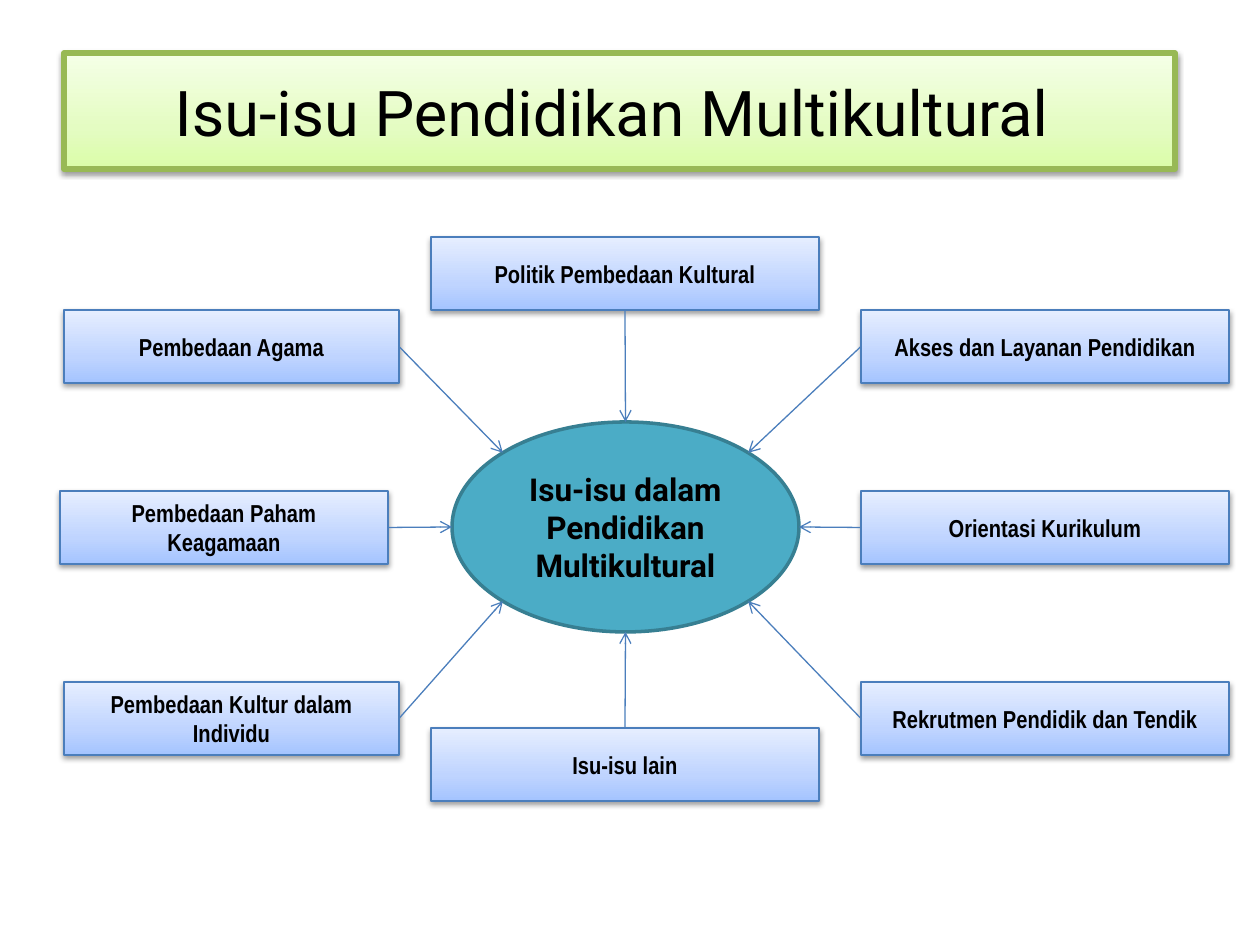
import math
import pptx
import pptx.util
import pptx.dml.color
import pptx.enum.shapes
import pptx.enum.text
import pptx.oxml.ns
import lxml.etree

RGBColor = pptx.dml.color.RGBColor
BLACK = RGBColor(0x00, 0x00, 0x00)
TEAL = RGBColor(0x4B, 0xAC, 0xC6)
DARK_TEAL = RGBColor(0x37, 0x7F, 0x92)
BLUE = RGBColor(0x4B, 0x7E, 0xBC)
GREEN = RGBColor(0x98, 0xB9, 0x55)
BLUE_STOPS = [
    (0, RGBColor(0xA4, 0xC4, 0xFF)),
    (0.35, RGBColor(0xBF, 0xD4, 0xFF)),
    (1, RGBColor(0xE6, 0xEE, 0xFF)),
]
GREEN_STOPS = [
    (0, RGBColor(0xDA, 0xFD, 0xA7)),
    (0.35, RGBColor(0xE4, 0xFC, 0xC2)),
    (1, RGBColor(0xF5, 0xFF, 0xE7)),
]
TITLE_FONT = {"name": "Roboto", "size": pptx.util.Pt(36), "bold": False}
HUB_FONT = {"name": "Roboto", "size": pptx.util.Pt(18), "bold": True}
ISSUE_FONT = {"name": "Arial Narrow", "size": pptx.util.Pt(14), "bold": True}

SCALE = 914400 / 126
TOP, LEFT, BOTTOM, RIGHT = range(4)
ISSUE_HEIGHT = 73
ISSUES = [
    ("Akses dan Layanan Pendidikan", 801, 73, 368, LEFT, (1, -1)),
    ("Politik Pembedaan Kultural", 371, 0, 388, BOTTOM, (0, -1)),
    ("Orientasi Kurikulum", 801, 254, 368, LEFT, (1, 0)),
    ("Isu-isu lain", 371, 491, 388, TOP, (0, 1)),
    ("Pembedaan Agama", 4, 73, 335, RIGHT, (-1, -1)),
    ("Pembedaan Paham Keagamaan", 0, 254, 328, RIGHT, (-1, 0)),
    ("Rekrutmen Pendidik dan Tendik", 801, 445, 368, LEFT, (1, 1)),
    ("Pembedaan Kultur dalam Individu", 4, 445, 335, RIGHT, (-1, 1)),
]


def px(length):
    return round(length * SCALE)


def add_element(parent, tag, **attributes):
    return lxml.etree.SubElement(parent, pptx.oxml.ns.qn(tag), attributes)


def set_attributes(target, values):
    for name, value in values.items():
        setattr(target, name, value)


def set_line(shape, color, points):
    shape.line.color.rgb = color
    shape.line.width = pptx.util.Pt(points)


def set_text(shape, text, font_values):
    frame = shape.text_frame
    set_attributes(frame, {
        "word_wrap": True,
        "auto_size": pptx.enum.text.MSO_AUTO_SIZE.NONE,
        "vertical_anchor": pptx.enum.text.MSO_ANCHOR.MIDDLE,
    })
    paragraph = frame.paragraphs[0]
    paragraph.alignment = pptx.enum.text.PP_ALIGN.CENTER
    run = paragraph.add_run()
    run.text = text
    set_attributes(run.font, font_values)
    run.font.color.rgb = BLACK


def set_gradient(shape, stops):
    shape.fill.gradient()
    shape.fill.gradient_angle = 90
    stop_list = shape._element.spPr.find(".//" + pptx.oxml.ns.qn("a:gsLst"))
    for stop in list(stop_list):
        stop_list.remove(stop)
    for position, color in stops:
        stop = add_element(stop_list, "a:gs", pos=str(round(position * 100000)))
        add_element(stop, "a:srgbClr", val=str(color))


def set_shadow(shape):
    shape.shadow.inherit = False
    effects = shape._element.spPr.find(pptx.oxml.ns.qn("a:effectLst"))
    shadow = add_element(effects, "a:outerShdw", blurRad="40000", dist="20000",
                         dir="5400000", rotWithShape="0")
    color = add_element(shadow, "a:srgbClr", val=str(BLACK))
    add_element(color, "a:alpha", val="38000")


def add_title(slide, left, top, width, height):
    title = slide.shapes.title
    set_attributes(title, {"left": px(left), "top": px(top),
                           "width": px(width), "height": px(height)})
    geometry = add_element(title._element.spPr, "a:prstGeom", prst="roundRect")
    add_element(geometry, "a:avLst")
    set_gradient(title, GREEN_STOPS)
    set_line(title, GREEN, 3)
    set_shadow(title)
    set_text(title, "Isu-isu Pendidikan Multikultural ", TITLE_FONT)


def add_hub(slide, left, top, width, height):
    hub = slide.shapes.add_shape(pptx.enum.shapes.MSO_SHAPE.OVAL,
                                 px(left), px(top), px(width), px(height))
    hub.shadow.inherit = False
    hub.fill.solid()
    hub.fill.fore_color.rgb = TEAL
    set_line(hub, DARK_TEAL, 2)
    set_text(hub, "Isu-isu dalam Pendidikan Multikultural", HUB_FONT)
    return hub


def add_issue(slide, text, left, top, width, height):
    issue = slide.shapes.add_shape(pptx.enum.shapes.MSO_SHAPE.RECTANGLE,
                                   px(left), px(top), px(width), px(height))
    set_gradient(issue, BLUE_STOPS)
    set_line(issue, BLUE, 0.75)
    set_shadow(issue)
    set_text(issue, text, ISSUE_FONT)
    return issue


def add_arrow(slide, issue, side, hub, direction):
    reach = math.hypot(*direction)
    end_x = round(hub.left + hub.width / 2 * (1 + direction[0] / reach))
    end_y = round(hub.top + hub.height / 2 * (1 + direction[1] / reach))
    arrow = slide.shapes.add_connector(pptx.enum.shapes.MSO_CONNECTOR.STRAIGHT,
                                       issue.left, issue.top, end_x, end_y)
    arrow.begin_connect(issue, side)
    set_line(arrow, BLUE, 0.75)
    add_element(arrow.line._get_or_add_ln(), "a:tailEnd", type="arrow")
    add_element(arrow._element.spPr, "a:effectLst")


def add_diagram(slide, left, top):
    hub = add_hub(slide, left + 392, top + 185, 347, 210)
    for text, issue_left, issue_top, width, side, direction in ISSUES:
        issue = add_issue(slide, text, left + issue_left, top + issue_top,
                          width, ISSUE_HEIGHT)
        add_arrow(slide, issue, side, hub, direction)


def main():
    presentation = pptx.Presentation()
    presentation.slide_width = px(1260)
    presentation.slide_height = px(945)
    slide = presentation.slides.add_slide(presentation.slide_layouts[5])
    add_title(slide, 64, 53, 1111, 116)
    add_diagram(slide, 60, 237)
    presentation.save("out.pptx")


if __name__ == "__main__":
    main()
